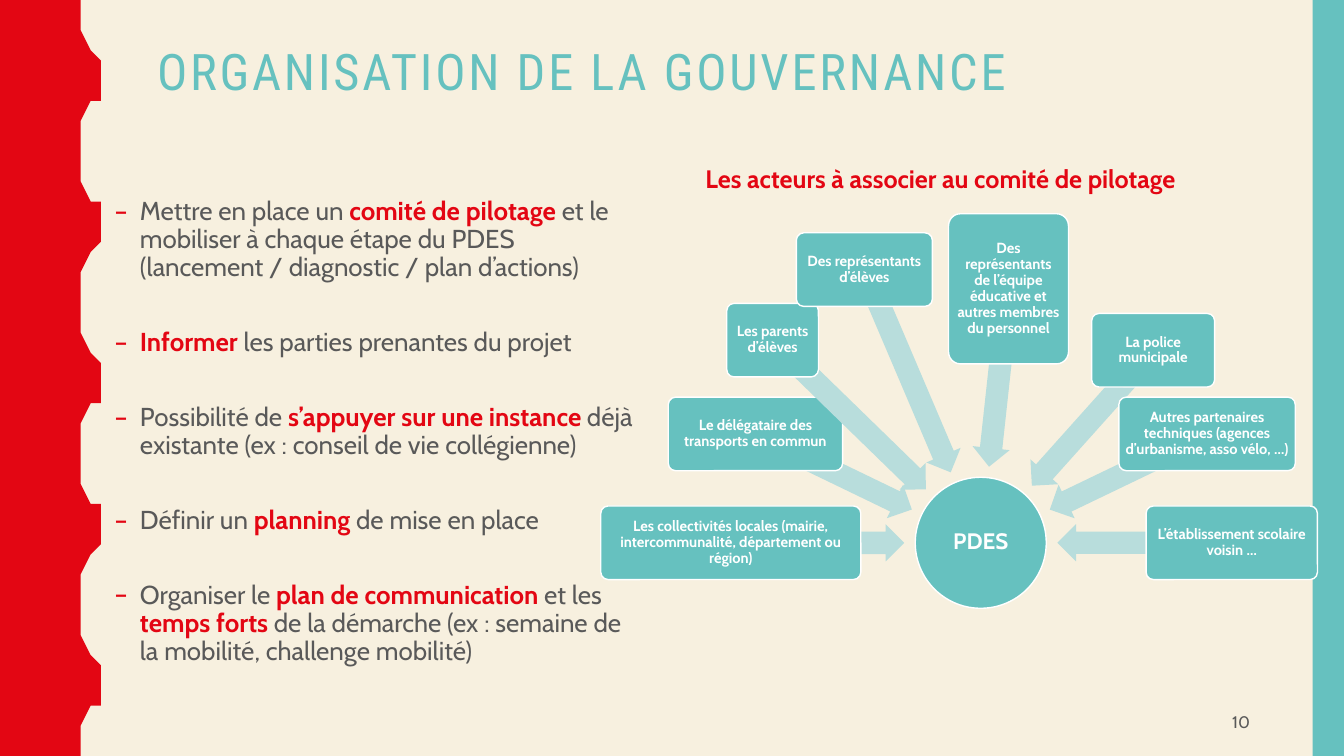
from dataclasses import dataclass
from math import atan2, cos, degrees, hypot, sin

from lxml.etree import SubElement
from pptx import Presentation
from pptx.dml.color import RGBColor
from pptx.enum.shapes import MSO_SHAPE as Preset
from pptx.enum.text import MSO_ANCHOR as Anchor, MSO_AUTO_SIZE as AutoSize, PP_ALIGN as Align
from pptx.oxml.ns import qn
from pptx.util import Inches, Pt


@dataclass(frozen=True)
class Theme:
    cream: str = "F7F0DF"
    red: str = "E30613"
    teal: str = "66C1BF"
    pale: str = "B8DDDC"
    grey: str = "595959"
    white: str = "FFFFFF"
    heading_font: str = "Roboto Condensed"
    body_font: str = "Cabin"
    title_size: float = 36
    bullet_size: float = 18.5
    caption_size: float = 18
    hub_size: float = 16
    label_size: float = 10.5
    number_size: float = 12


THEME = Theme()
CELL = Inches(0.1)  # side of one grid square


@dataclass(frozen=True)
class Box:
    """A rectangle in grid columns and rows."""
    left: float
    top: float
    width: float
    height: float

    def inner(self, left, top, width, height):
        return Box(self.left + left, self.top + top, width, height)

    def around(self, x, y, width, height):
        return self.inner(x - width / 2, y - height / 2, width, height)

    def emu(self):
        return [round(v * CELL) for v in (self.left, self.top, self.width, self.height)]


SLIDE = Box(0, 0, 133.33, 75)
BULLETS = [  # emphasised words stand between asterisks
    "Mettre en place un *comité de pilotage *et le mobiliser à chaque étape du PDES "
    "(lancement / diagnostic / plan d’actions)",
    "*Informer* les parties prenantes du projet",
    "Possibilité de *s’appuyer sur une instance *déjà existante (ex : conseil de vie collégienne)",
    "Définir un *planning* de mise en place",
    "Organiser le *plan de communication *et les *temps forts *de la démarche "
    "(ex : semaine de la mobilité, challenge mobilité)",
]
ACTORS = [  # label, centre column, centre row, width, height
    ("Les collectivités locales (mairie, intercommunalité, département ou région)",
     12.9, 38.15, 25.8, 7.3),
    ("Le délégataire des transports en commun", 15.35, 27.35, 17.3, 7.3),
    ("Les parents d’élèves", 17.05, 18.05, 9.1, 7.3),
    ("Des représentants d’élèves", 26.15, 11.05, 13.5, 7.3),
    ("Des représentants de l’équipe éducative et autres membres du personnel",
     40.45, 12.95, 11.9, 14.9),
    ("La police municipale", 54.8, 19.05, 12.2, 7.3),
    ("Autres partenaires techniques (agences d’urbanisme, asso vélo, …)",
     60.15, 27.35, 17.5, 7.3),
    ("L’établissement scolaire voisin …", 62.6, 38.15, 17, 7.3),
]
# Half a wave: distance down from the trough, then column of the edge
HALF_WAVE = [(0, 7.8), (0.7, 7.8), (1.4, 7.9), (2, 8), (2.5, 8.1), (2.9, 8.3), (4.6, 9.1),
             (5, 9.3), (5.5, 9.5), (6.1, 9.6), (6.8, 9.7), (7.5, 9.7)]
WAVES = 5


def paint(shape, fill, line=None):
    shape.shadow.inherit = False
    shape.fill.solid()
    shape.fill.fore_color.rgb = RGBColor.from_string(fill)
    if line:
        shape.line.color.rgb = RGBColor.from_string(line)
        shape.line.width = Pt(1)
    else:
        shape.line.fill.background()
    return shape


def add_preset(page, preset, box, fill, line=None):
    return paint(page.shapes.add_shape(preset, *box.emu()), fill, line)


def style(font, size, color, bold=False, name=THEME.body_font):
    font.name, font.size, font.bold = name, Pt(size), bold
    font.color.rgb = RGBColor.from_string(color)


def add_text(page, box, text, size, color, bold=False, name=THEME.body_font):
    shape = page.shapes.add_textbox(*box.emu())
    shape.text_frame.word_wrap = True
    para = shape.text_frame.paragraphs[0]
    para.text = text
    style(para.runs[0].font, size, color, bold, name)
    return shape


def label(shape, text, size, inset):
    frame = shape.text_frame
    frame.text = text
    frame.word_wrap = True
    frame.vertical_anchor = Anchor.MIDDLE
    frame.margin_left = frame.margin_right = frame.margin_top = frame.margin_bottom = Inches(inset)
    para = frame.paragraphs[0]
    para.alignment, para.line_spacing = Align.CENTER, 0.9
    style(para.runs[0].font, size, THEME.white, True)


def draw_edges(page, box):
    # Wavy band on the left
    period = box.height / WAVES
    wave = HALF_WAVE + [(period - y, x) for y, x in reversed(HALF_WAVE[:-1])]
    edge = [(box.left + x, box.top + n * period + y) for n in range(WAVES) for y, x in wave]
    outline = page.shapes.build_freeform(box.left, box.top, scale=CELL)
    outline.add_line_segments(edge + [(box.left, box.top + box.height)], close=True)
    paint(outline.convert_to_shape(), THEME.red)
    # Straight band on the right
    add_preset(page, Preset.RECTANGLE, box.inner(box.width - 3.1, 0, 3.1, box.height), THEME.teal)


def draw_title(page, box):
    title = add_text(page, box, "ORGANISATION DE LA GOUVERNANCE", THEME.title_size,
                     THEME.teal, name=THEME.heading_font)
    para = title.text_frame.paragraphs[0]
    para.line_spacing = 0.9
    para.runs[0]._r.get_or_add_rPr().set("spc", "200")


def add_dash(para):
    props = para._p.get_or_add_pPr()
    props.set("marL", str(Inches(0.25)))
    props.set("indent", str(-Inches(0.25)))
    color = SubElement(props, qn("a:buClr"))
    SubElement(color, qn("a:srgbClr")).set("val", THEME.red)
    SubElement(props, qn("a:buFont")).set("typeface", THEME.body_font)
    SubElement(props, qn("a:buChar")).set("char", "–")


def draw_bullets(page, box):
    frame = page.shapes.add_textbox(*box.emu()).text_frame
    frame.word_wrap = True
    for index, bullet in enumerate(BULLETS):
        para = frame.add_paragraph() if index else frame.paragraphs[0]
        add_dash(para)
        para.line_spacing = 0.9
        para.space_before = Pt(33.5 if index else 0)
        for order, words in enumerate(bullet.split("*")):
            if words:
                span = para.add_run()
                span.text = words
                strong = order % 2 == 1
                style(span.font, THEME.bullet_size, THEME.red if strong else THEME.grey, strong)


def draw_actors(page, box):
    # Caption
    caption = add_text(page, box.inner(9.4, 0, 55.5, 4), "Les acteurs à associer au comité de pilotage",
                       THEME.caption_size, THEME.red, True)
    caption.text_frame.word_wrap = False
    caption.text_frame.auto_size = AutoSize.SHAPE_TO_FIT_TEXT
    # Hub
    hub_x, hub_y, reach = 37.7, 38.15, 7.6
    hub = add_preset(page, Preset.OVAL, box.around(hub_x, hub_y, 13, 13), THEME.teal, THEME.white)
    label(hub, "PDES", THEME.hub_size, 0.01)
    # Each actor's arrow runs from its centre and stops short of the hub
    for text, x, y, width, height in ACTORS:
        length = hypot(hub_x - x, hub_y - y) - reach
        angle = atan2(hub_y - y, hub_x - x)
        middle = x + cos(angle) * length / 2, y + sin(angle) * length / 2
        arrow = add_preset(page, Preset.LEFT_ARROW, box.around(*middle, length, 3.7), THEME.pale)
        arrow.adjustments[0], arrow.adjustments[1] = 0.6, 0.5
        arrow.rotation = (degrees(angle) + 180) % 360
        card = add_preset(page, Preset.ROUNDED_RECTANGLE, box.around(x, y, width, height),
                          THEME.teal, THEME.white)
        card.adjustments[0] = 0.1
        label(card, text, THEME.label_size, 0.04)


def draw_number(page, box):
    frame = add_text(page, box, "10", THEME.number_size, THEME.grey).text_frame
    frame.vertical_anchor = Anchor.MIDDLE
    frame.paragraphs[0].alignment = Align.RIGHT


def main():
    deck = Presentation()
    _, _, deck.slide_width, deck.slide_height = SLIDE.emu()
    page = deck.slides.add_slide(deck.slide_layouts[6])
    page.background.fill.solid()
    page.background.fill.fore_color.rgb = RGBColor.from_string(THEME.cream)
    draw_edges(page, SLIDE)
    draw_title(page, SLIDE.inner(14.6, 4.2, 111.3, 16.3))
    draw_bullets(page, SLIDE.inner(10.4, 19.2, 54, 49))
    draw_actors(page, SLIDE.inner(59.6, 15.7, 71.1, 44.7))
    draw_number(page, SLIDE.inner(94.2, 69.7, 30.8, 3.8))
    deck.save("out.pptx")


if __name__ == "__main__":
    main()
